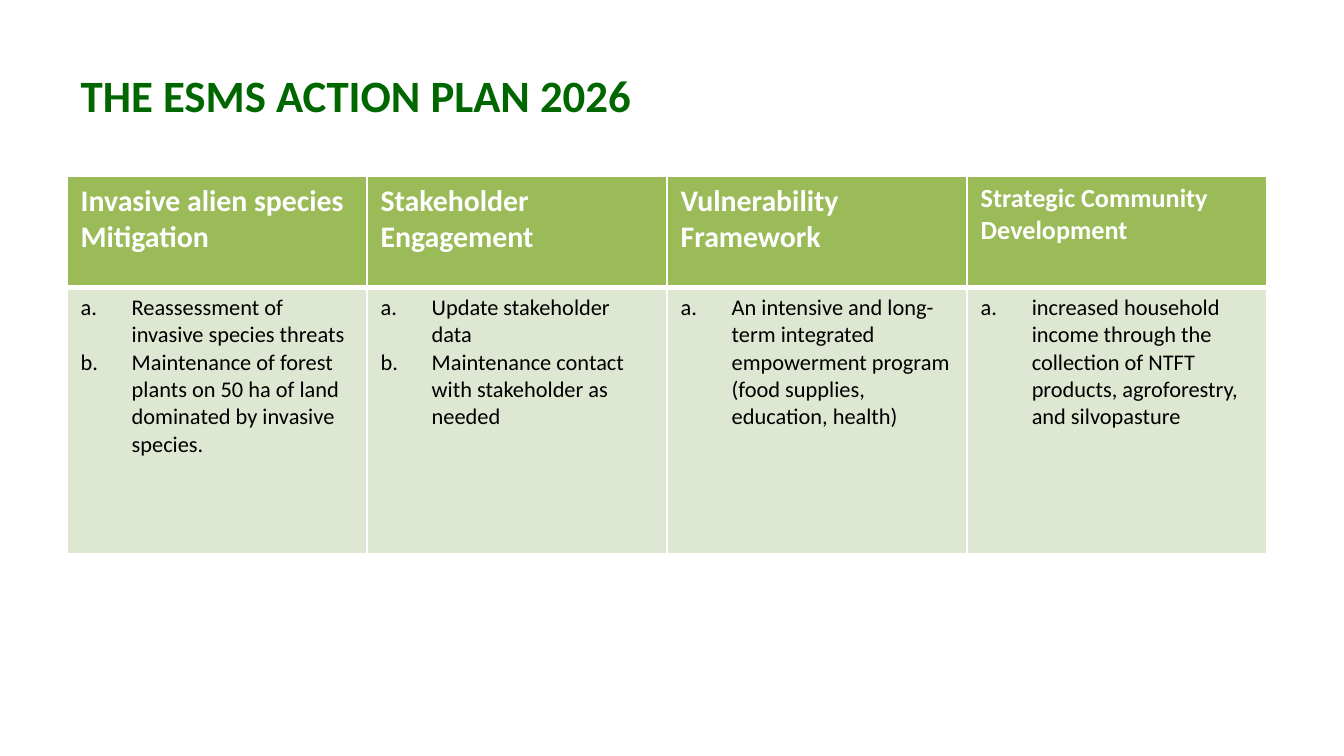
import pptx
import pptx.dml.color
import pptx.enum.text
import pptx.oxml
import pptx.oxml.ns
import pptx.util
from pptx.util import Inches

FONT = "Calibri"
WHITE, BLACK = "FFFFFF", "000000"
TITLE_GREEN, HEADER_GREEN, BODY_GREEN = "006600", "9BBB59", "DEE7D1"

# Heading, heading size, actions
PLAN = [
    ("Invasive alien species Mitigation", 16,
     ["Reassessment of invasive species threats",
      "Maintenance of forest plants on 50 ha of land dominated by invasive species."]),
    ("Stakeholder Engagement", 16,
     ["Update stakeholder data",
      "Maintenance contact with stakeholder as needed"]),
    ("Vulnerability Framework", 16,
     ["An intensive and long-term integrated empowerment program "
      "(food supplies, education, health)"]),
    ("Strategic Community Development", 14,
     ["increased household income through the collection of NTFT products, "
      "agroforestry, and silvopasture"]),
]


def rgb(value):
    return pptx.dml.color.RGBColor.from_string(value)


def format_runs(paragraph, size, color, bold):
    for run in paragraph.runs:
        run.font.name = FONT
        run.font.size = pptx.util.Pt(size)
        run.font.bold = bold
        run.font.color.rgb = rgb(color)


def add_letter(paragraph):
    """Number the paragraph a., b., ... with a hanging indent."""
    properties = paragraph._p.get_or_add_pPr()
    properties.set("marL", str(Inches(0.38)))
    properties.set("indent", str(-Inches(0.38)))
    number = pptx.oxml.parse_xml(
        f'<a:buAutoNum {pptx.oxml.ns.nsdecls("a")} type="alphaLcPeriod"/>')
    properties.append(number)


def style_cell(cell, fill, top, bottom):
    """Draw white borders, widths in points, then fill the cell."""
    properties = cell._tc.get_or_add_tcPr()
    for side, width in (("L", 1), ("R", 1), ("T", top), ("B", bottom)):
        properties.append(pptx.oxml.parse_xml(
            f'<a:ln{side} {pptx.oxml.ns.nsdecls("a")} w="{pptx.util.Pt(width)}">'
            f'<a:solidFill><a:srgbClr val="{WHITE}"/></a:solidFill></a:ln{side}>'))
    cell.fill.solid()
    cell.fill.fore_color.rgb = rgb(fill)


def add_title(slide, text, left, top, width, height):
    title = slide.shapes.title
    title.left, title.top = Inches(left), Inches(top)
    title.width, title.height = Inches(width), Inches(height)
    text_frame = title.text_frame
    text_frame.text = text
    text_frame.word_wrap = True
    text_frame.vertical_anchor = pptx.enum.text.MSO_ANCHOR.MIDDLE
    paragraph = text_frame.paragraphs[0]
    paragraph.alignment = pptx.enum.text.PP_ALIGN.LEFT
    format_runs(paragraph, 24, TITLE_GREEN, True)


def add_plan_table(slide, left, top, width, row_heights):
    table = slide.shapes.add_table(
        2, len(PLAN), Inches(left), Inches(top),
        Inches(width), Inches(sum(row_heights))).table
    for row, height in zip(table.rows, row_heights):
        row.height = Inches(height)

    for index, (heading, size, actions) in enumerate(PLAN):
        # Header cell
        header = table.cell(0, index)
        header.text_frame.text = heading
        format_runs(header.text_frame.paragraphs[0], size, WHITE, True)
        style_cell(header, HEADER_GREEN, top=1, bottom=3)

        # Lettered actions
        body = table.cell(1, index)
        body.text_frame.text = "\n".join(actions)
        for paragraph in body.text_frame.paragraphs:
            add_letter(paragraph)
            format_runs(paragraph, 12, BLACK, False)
        style_cell(body, BODY_GREEN, top=3, bottom=1)


def main():
    presentation = pptx.Presentation()
    # Widescreen, 16:9
    presentation.slide_width = Inches(10)
    presentation.slide_height = presentation.slide_width * 9 // 16
    slide = presentation.slides.add_slide(presentation.slide_layouts[5])
    add_title(slide, "THE ESMS ACTION PLAN 2026", 0.5, 0.23, 4.5, 0.94)
    add_plan_table(slide, 0.5, 1.31, 8.93, (0.83, 1.98))
    presentation.save("out.pptx")


if __name__ == "__main__":
    main()
